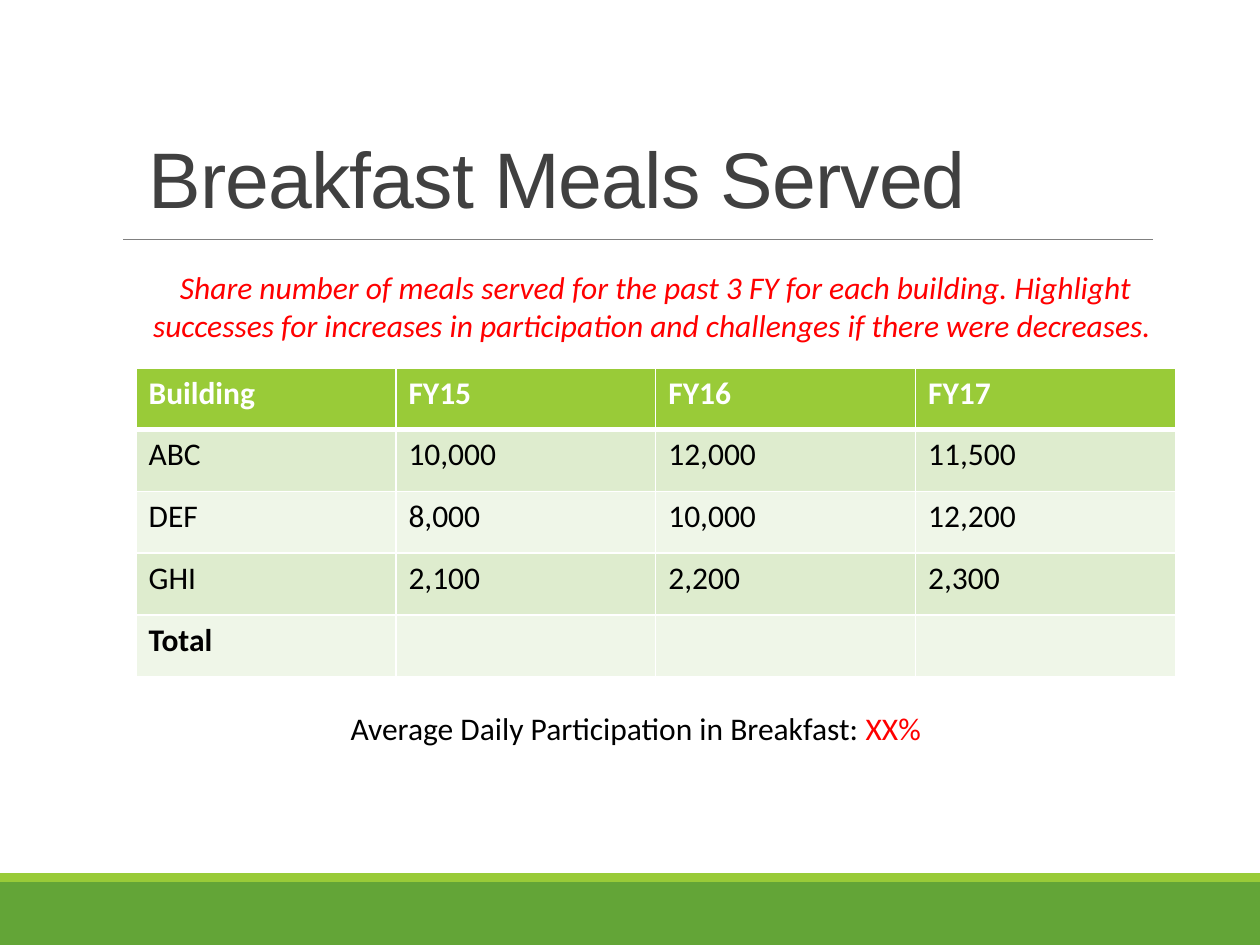
from dataclasses import dataclass

from lxml.etree import SubElement
from pptx import Presentation
from pptx.dml.color import RGBColor
from pptx.enum.shapes import MSO_CONNECTOR, MSO_SHAPE
from pptx.enum.text import MSO_ANCHOR, PP_ALIGN
from pptx.oxml.ns import qn
from pptx.util import Inches, Pt


@dataclass(frozen=True)
class Theme:
    title_font: str = "Arial"
    body_font: str = "Calibri"
    title_size: float = 45
    body_size: float = 18
    title: str = "404040"
    ink: str = "000000"
    alert: str = "FF0000"
    paper: str = "FFFFFF"
    rule: str = "808080"
    footer: str = "63A537"
    accent: str = "99CB38"
    bands: tuple = ("DEECCE", "EFF6E8")


THEME = Theme()
WIDTH, HEIGHT = 10, 7.5

MEALS = [
    ("Building", "FY15", "FY16", "FY17"),
    ("ABC", "10,000", "12,000", "11,500"),
    ("DEF", "8,000", "10,000", "12,200"),
    ("GHI", "2,100", "2,200", "2,300"),
    ("Total", "", "", ""),
]


def inches(*lengths):
    return [Inches(length) for length in lengths]


def add_span(para, text, color, **formats):
    span = para.add_run()
    span.text = text
    values = {"name": THEME.body_font, "size": Pt(THEME.body_size), **formats}
    for name, value in values.items():
        setattr(span.font, name, value)
    span.font.color.rgb = RGBColor.from_string(color)
    return span


def add_text_box(page, box, anchor=MSO_ANCHOR.TOP, align=PP_ALIGN.CENTER):
    """Add a wrapping text box and return its first paragraph."""
    frame = page.shapes.add_textbox(*inches(*box)).text_frame
    frame.word_wrap = True
    frame.vertical_anchor = anchor
    para = frame.paragraphs[0]
    para.alignment = align
    return para


def add_footer(page, box):
    """Fill the box with a dark band under a thin accent strip."""
    left, top, width, height = box
    strip = 0.07
    bands = [
        (top + strip, height - strip, THEME.footer),
        (top, strip, THEME.accent),
    ]
    for band_top, band_height, color in bands:
        band = page.shapes.add_shape(
            MSO_SHAPE.RECTANGLE, *inches(left, band_top, width, band_height))
        band.shadow.inherit = False
        band.fill.solid()
        band.fill.fore_color.rgb = RGBColor.from_string(color)
        band.line.fill.background()


def add_heading(page, box, text):
    """Set the title at the bottom of the box, with a rule just below it."""
    left, top, width, height = box
    para = add_text_box(page, box, MSO_ANCHOR.BOTTOM, PP_ALIGN.LEFT)
    para.line_spacing = 0.85
    span = add_span(para, text, THEME.title,
                    name=THEME.title_font, size=Pt(THEME.title_size))
    span.font._element.set("spc", "-50")

    rule_y = top + height + 0.07
    rule = page.shapes.add_connector(
        MSO_CONNECTOR.STRAIGHT,
        *inches(left - 0.1, rule_y, left + width + 0.4, rule_y))
    rule.line.width = Pt(0.5)
    rule.line.color.rgb = RGBColor.from_string(THEME.rule)
    SubElement(rule._element.spPr, qn("a:effectLst"))


def set_borders(cell, **widths):
    """Draw paper-coloured borders; widths are points, keyed by side."""
    properties = cell._tc.get_or_add_tcPr()
    for side in "LRTB":
        line = SubElement(properties, qn(f"a:ln{side}"),
                          w=str(Pt(widths.get(side, 1))))
        fill = SubElement(line, qn("a:solidFill"))
        SubElement(fill, qn("a:srgbClr"), val=THEME.paper)


def add_meals_table(page, box, rows):
    table = page.shapes.add_table(len(rows), len(rows[0]), *inches(*box)).table
    for r, row in enumerate(rows):
        header = r == 0
        fill = THEME.accent if header else THEME.bands[(r - 1) % 2]
        color = THEME.paper if header else THEME.ink
        thick = {0: {"B": 3}, 1: {"T": 3}}.get(r, {})
        for c, text in enumerate(row):
            cell = table.cell(r, c)
            set_borders(cell, **thick)
            cell.fill.solid()
            cell.fill.fore_color.rgb = RGBColor.from_string(fill)
            if text:
                add_span(cell.text_frame.paragraphs[0], text, color,
                         bold=header or row[0] == "Total")


def add_guidance(page, box, text):
    add_span(add_text_box(page, box), text, THEME.alert, italic=True)


def add_participation(page, box, label, value):
    para = add_text_box(page, box)
    add_span(para, label, THEME.ink)
    add_span(para, value, THEME.alert)


def main():
    deck = Presentation()
    deck.slide_width, deck.slide_height = inches(WIDTH, HEIGHT)
    page = deck.slides.add_slide(deck.slide_layouts[6])

    add_footer(page, (0, HEIGHT - 0.57, WIDTH, 0.57))
    add_heading(page, (1.08, 0.58, 7.67, 1.25), "Breakfast Meals Served")
    add_meals_table(page, (1.08, 2.92, 8.25, 2.45), MEALS)
    add_guidance(
        page, (0.83, 2.08, 8.75, 0.71),
        "Share number of meals served for the past 3 FY for each building. "
        "Highlight successes for increases in participation and challenges "
        "if there were decreases. ")
    add_participation(page, (1.17, 5.58, 7.75, 0.4),
                      "Average Daily Participation in Breakfast: ", "XX%")
    deck.save("out.pptx")


if __name__ == "__main__":
    main()
